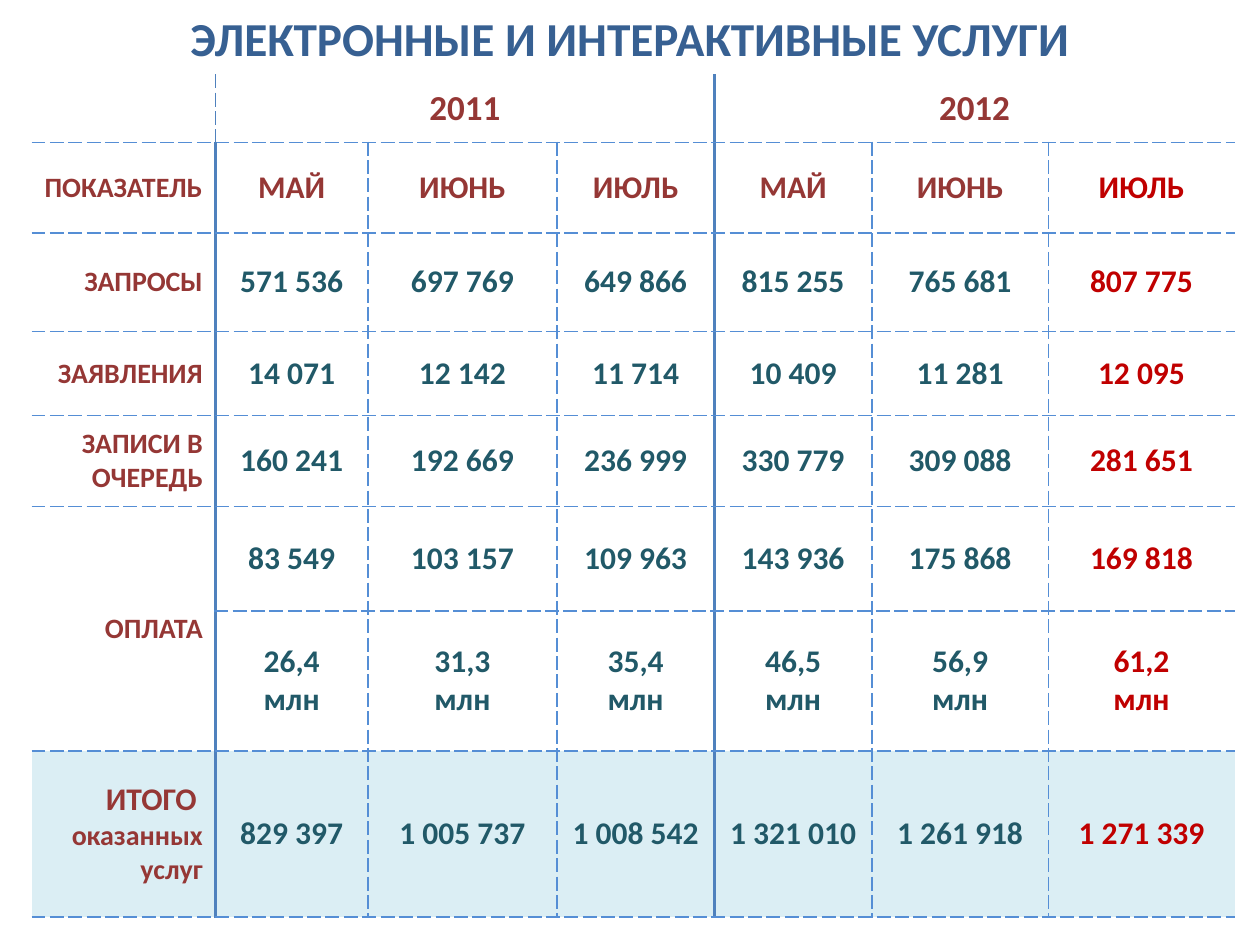
from dataclasses import dataclass

from lxml.etree import SubElement
from pptx import Presentation
from pptx.dml.color import RGBColor
from pptx.enum.text import MSO_ANCHOR, PP_ALIGN
from pptx.oxml.ns import qn
from pptx.util import Inches, Pt


@dataclass(frozen=True)
class Theme:
    font: str = "Calibri"
    title: str = "376092"
    head: str = "953735"
    value: str = "215968"
    accent: str = "C00000"
    total: str = "DBEEF4"
    solid: str = "4F81BD"
    dash: str = "558ED5"
    title_size: float = 27
    year_size: float = 20
    value_size: float = 18
    label_size: float = 16


THEME = Theme()
TITLE = "ЭЛЕКТРОННЫЕ И ИНТЕРАКТИВНЫЕ УСЛУГИ"
WIDTHS = [1.46, 1.21, 1.5, 1.25, 1.25, 1.4, 1.48]
HEIGHTS = [0.54, 0.72, 0.78, 0.67, 0.72, 0.83, 1.11, 1.32]
YEARS = {1: "2011", 4: "2012"}
ROWS = [
    ["ПОКАЗАТЕЛЬ", "МАЙ", "ИЮНЬ", "ИЮЛЬ", "МАЙ", "ИЮНЬ", "ИЮЛЬ"],
    ["ЗАПРОСЫ", "571 536", "697 769", "649 866", "815 255", "765 681", "807 775"],
    ["ЗАЯВЛЕНИЯ", "14 071", "12 142", "11 714", "10 409", "11 281", "12 095"],
    ["ЗАПИСИ В ОЧЕРЕДЬ", "160 241", "192 669", "236 999", "330 779", "309 088", "281 651"],
    ["ОПЛАТА", "83 549", "103 157", "109 963", "143 936", "175 868", "169 818"],
    ["", "26,4\nмлн", "31,3\nмлн", "35,4\nмлн", "46,5\nмлн", "56,9\nмлн", "61,2\nмлн"],
    ["ИТОГО", "829 397", "1 005 737", "1 008 542", "1 321 010", "1 261 918", "1 271 339"],
]
TOTAL_NOTE = "оказанных услуг"
LAST_ROW, LAST_COL = len(HEIGHTS) - 1, len(WIDTHS) - 1
PAY_ROW = 5


def style(font, size, color):
    for key, val in dict(name=THEME.font, size=Pt(size), bold=True).items():
        setattr(font, key, val)
    font.color.rgb = RGBColor.from_string(color)


def write(frame, text, size, color, align=PP_ALIGN.CENTER):
    frame.text = text
    for para in frame.paragraphs:
        para.alignment = align
        for run in para.runs:
            style(run.font, size, color)


def upright(row, edge):
    """Colour, width and dash of the vertical line at a column edge, if any."""
    if edge in (0, LAST_COL + 1) or (row == 0 and edge not in (1, 4)):
        return None
    if row == 0 and edge == 1:
        return THEME.solid, 1, "sysDash"
    if edge in (1, 4):
        return THEME.solid, 1.5, "solid"
    return THEME.dash, 1, "sysDash"


def level(edge, col):
    """Colour, width and dash of the horizontal line at a row edge, if any."""
    if edge == 0 or (edge == PAY_ROW + 1 and col == 0):
        return None
    return THEME.dash, 1, "sysDash"


def border(cell, row, col):
    props = cell._tc.get_or_add_tcPr()
    sides = {
        "a:lnL": upright(row, col),
        "a:lnR": upright(row, col + 1),
        "a:lnT": level(row, col),
        "a:lnB": level(row + 1, col),
    }
    for tag, line in sides.items():
        node = SubElement(props, qn(tag))
        if line is None:
            SubElement(node, qn("a:noFill"))
            continue
        color, width, dash = line
        node.set("w", str(Pt(width)))
        fill = SubElement(node, qn("a:solidFill"))
        SubElement(fill, qn("a:srgbClr")).set("val", color)
        SubElement(node, qn("a:prstDash")).set("val", dash)


def paint(cell, row):
    if row == LAST_ROW:
        cell.fill.solid()
        cell.fill.fore_color.rgb = RGBColor.from_string(THEME.total)
    else:
        cell.fill.background()


def fill_label(cell, row, text):
    align = PP_ALIGN.CENTER if row == 1 else PP_ALIGN.RIGHT
    size = THEME.value_size if row == LAST_ROW else THEME.label_size
    write(cell.text_frame, text, size, THEME.head, align)
    if row == LAST_ROW:
        para = cell.text_frame.paragraphs[0]
        for part in (" ", TOTAL_NOTE):
            if part == TOTAL_NOTE:
                para.add_line_break()
            run = para.add_run()
            run.text = part
            style(run.font, THEME.label_size, THEME.head)


def fill_value(cell, row, col, text):
    color = THEME.head if row == 1 else THEME.value
    if col == LAST_COL:
        color = THEME.accent
    write(cell.text_frame, text, THEME.value_size, color)


def add_title(slide, left, top, width, height):
    box = slide.shapes.add_textbox(*map(Inches, (left, top, width, height)))
    frame = box.text_frame
    frame.word_wrap = True
    frame.vertical_anchor = MSO_ANCHOR.MIDDLE
    write(frame, TITLE, THEME.title_size, THEME.title)


def add_grid(slide, left, top):
    size = (left, top, sum(WIDTHS), sum(HEIGHTS))
    table = slide.shapes.add_table(
        len(HEIGHTS), len(WIDTHS), *map(Inches, size)).table
    table.first_row = table.horz_banding = False
    for col, width in zip(table.columns, WIDTHS):
        col.width = Inches(width)
    for row, height in zip(table.rows, HEIGHTS):
        row.height = Inches(height)
    for row in range(len(HEIGHTS)):
        for col in range(len(WIDTHS)):
            cell = table.cell(row, col)
            cell.vertical_anchor = MSO_ANCHOR.MIDDLE
            border(cell, row, col)
            paint(cell, row)
    for col, year in YEARS.items():
        cell = table.cell(0, col)
        cell.merge(table.cell(0, col + 2))
        write(cell.text_frame, year, THEME.year_size, THEME.head)
    table.cell(PAY_ROW, 0).merge(table.cell(PAY_ROW + 1, 0))
    for row, (label, *values) in enumerate(ROWS, 1):
        if label:
            fill_label(table.cell(row, 0), row, label)
        for col, text in enumerate(values, 1):
            fill_value(table.cell(row, col), row, col, text)


def main():
    deck = Presentation()
    deck.slide_width, deck.slide_height = Inches(10), Inches(7.5)
    slide = deck.slides.add_slide(deck.slide_layouts[6])
    add_title(slide, 0, 0, 10, 0.6)
    add_grid(slide, 0.25, 0.59)
    deck.save("out.pptx")


if __name__ == "__main__":
    main()
